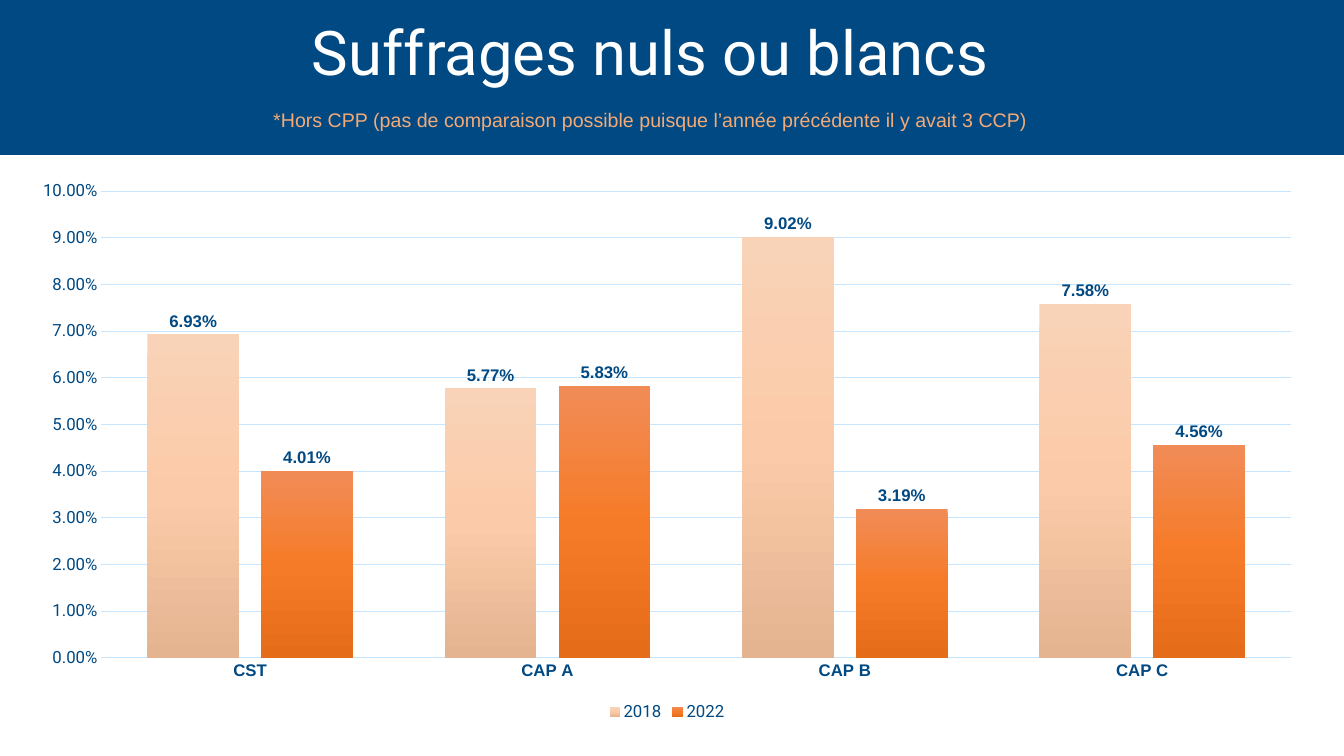
from pptx import Presentation
from pptx.chart.data import CategoryChartData
from pptx.dml.color import RGBColor
from pptx.enum.chart import XL_CHART_TYPE, XL_LABEL_POSITION, XL_LEGEND_POSITION, XL_TICK_MARK
from pptx.enum.shapes import MSO_SHAPE
from pptx.enum.text import MSO_ANCHOR, MSO_AUTO_SIZE, PP_ALIGN
from pptx.oxml import parse_xml
from pptx.oxml.ns import nsdecls
from pptx.util import Pt

PX = 914400 / 100.8
NAVY, PALE_BLUE = "004982", "C6E6FF"
PERCENT = "0.00%"


def box(*lengths):
    """Turn lengths in px into EMU."""
    return [round(n * PX) for n in lengths]


def style(font, size, color, name, bold=False):
    font.size, font.name, font.bold = Pt(size), name, bold
    font.color.rgb = RGBColor.from_string(color)


prs = Presentation()
prs.slide_width, prs.slide_height = box(1344, 756)
s = prs.slides.add_slide(prs.slide_layouts[5])

# Header band, behind the title
band = s.shapes.add_shape(MSO_SHAPE.RECTANGLE, *box(0, 0, 1344, 155))
band.shadow.inherit = False
band.fill.solid()
band.fill.fore_color.rgb = RGBColor.from_string(NAVY)
band.line.fill.background()
s.shapes._spTree.insert(2, band._element)

# Title and its note
title = s.shapes.title
title.left, title.top, title.width, title.height = box(71, 14, 1159, 146)
tf = title.text_frame
tf.text = ("Suffrages nuls ou blancs\n"
           "*Hors CPP (pas de comparaison possible puisque l’année précédente il y avait 3 CCP)")
tf.word_wrap = True
tf.auto_size = MSO_AUTO_SIZE.NONE
tf.vertical_anchor = MSO_ANCHOR.TOP
tf.margin_top = tf.margin_bottom = 0
heading, note = tf.paragraphs
for p in (heading, note):
    p.alignment = PP_ALIGN.CENTER
    p.line_spacing = 1.0
    p.space_before = Pt(0)
note.space_before = Pt(14)
style(heading.runs[0].font, 44, "FFFFFF", "Roboto")
style(note.runs[0].font, 14, "F4AA77", "Arial")

# Chart
data = CategoryChartData(number_format=PERCENT)
data.categories = ["CST", "CAP A", "CAP B", "CAP C"]
data.add_series("2018", [0.0693, 0.0577, 0.0902, 0.0758])
data.add_series("2022", [0.0401, 0.0583, 0.0319, 0.0456])
chart = s.shapes.add_chart(XL_CHART_TYPE.COLUMN_CLUSTERED, *box(17, 170, 1300, 556), data).chart
style(chart.font, 10, NAVY, "Roboto")
chart.has_title = False
chart.has_legend = True
chart.legend.position = XL_LEGEND_POSITION.BOTTOM
chart.legend.include_in_layout = False
style(chart.legend.font, 12, NAVY, "Roboto")

cat_axis, val_axis = chart.category_axis, chart.value_axis
val_axis.minimum_scale, val_axis.maximum_scale, val_axis.major_unit = 0, 0.1, 0.01
val_axis.tick_labels.number_format = PERCENT
val_axis.tick_labels.number_format_is_linked = False
for axis in (cat_axis, val_axis):
    axis.major_tick_mark = axis.minor_tick_mark = XL_TICK_MARK.NONE
style(cat_axis.tick_labels.font, 12, NAVY, "Arial", bold=True)
style(val_axis.tick_labels.font, 12, NAVY, "Roboto")
val_axis.format.line.fill.background()
for line in (cat_axis.format.line, val_axis.major_gridlines.format.line):
    line.width = Pt(0.75)
    line.color.rgb = RGBColor.from_string(PALE_BLUE)

plot = chart.plots[0]
plot.gap_width, plot.overlap = 100, -24
plot.vary_by_categories = False
gradients = [("F9D3B8", "FBCAA8", "E4B390"), ("F18C57", "F67B28", "E56C19")]
for series, colors in zip(plot.series, gradients):
    stops = "".join(f'<a:gs pos="{i * 50000}"><a:srgbClr val="{color}"/></a:gs>'
                    for i, color in enumerate(colors))
    series._element.get_or_add_spPr().append(parse_xml(
        f'<a:gradFill {nsdecls("a")}><a:gsLst>{stops}</a:gsLst>'
        '<a:lin ang="5400000" scaled="0"/></a:gradFill>'))
    labels = series.data_labels
    labels.show_value = True
    labels.position = XL_LABEL_POSITION.OUTSIDE_END
    labels.number_format = PERCENT
    labels.number_format_is_linked = False
    style(labels.font, 12, NAVY, "Arial", bold=True)

prs.save("out.pptx")
